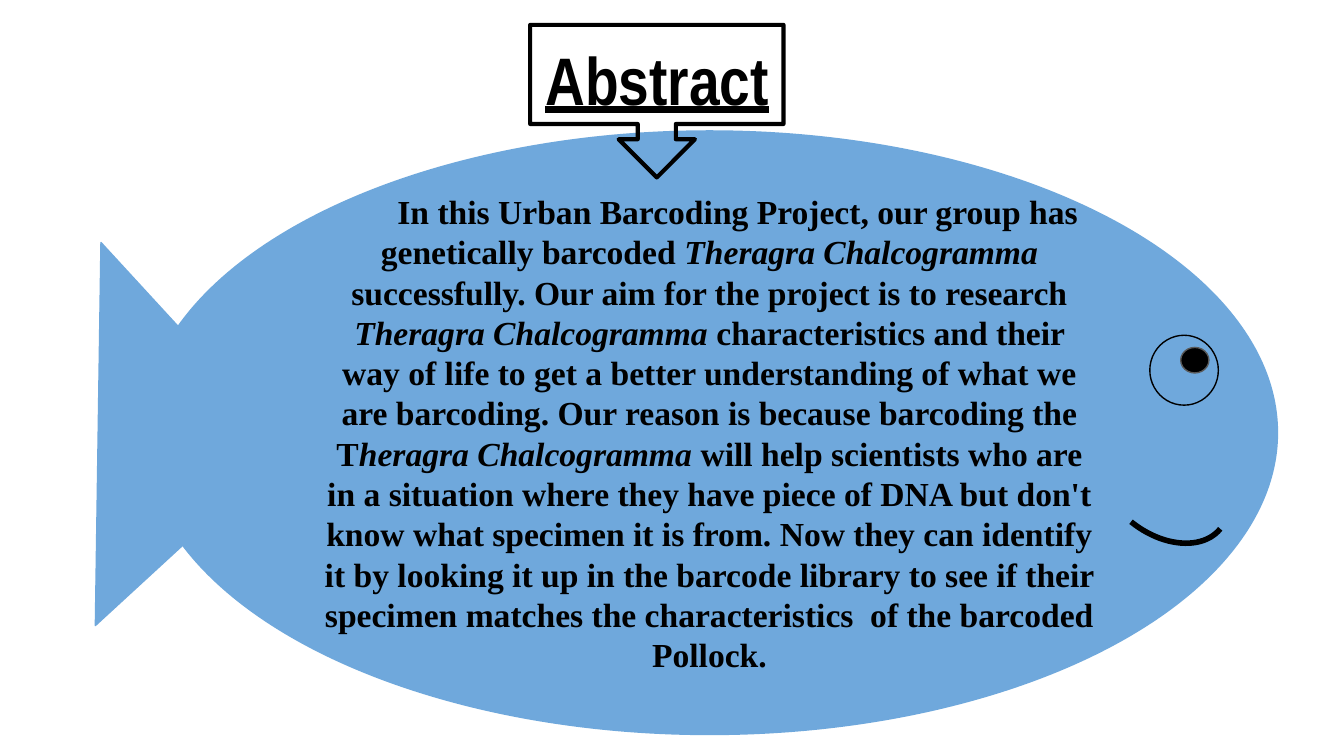
from dataclasses import dataclass
from typing import Optional

from pptx import Presentation
from pptx.dml.color import RGBColor
from pptx.enum.shapes import MSO_SHAPE
from pptx.enum.text import MSO_ANCHOR, MSO_AUTO_SIZE, PP_ALIGN
from pptx.util import Emu, Pt

PX = 4572  # EMU in one px, 200 px to the inch
PAGE_WIDTH, PAGE_HEIGHT = 2000, 1125
BLACK = RGBColor(0x00, 0x00, 0x00)
BLUE = RGBColor(0x6F, 0xA8, 0xDC)
GREY = RGBColor(0x59, 0x59, 0x59)
INSET = 20
FIRST_LINE_INDENT = 84


@dataclass
class Part:
    kind: MSO_SHAPE
    place: tuple[int, int, int, int]
    line: RGBColor
    weight: float
    fill: Optional[RGBColor] = None
    rotation: float = 0
    adjustments: tuple[float, ...] = ()


BODY = Part(MSO_SHAPE.FLOWCHART_CONNECTOR, (212, 196, 1688, 896), BLUE, 1.5, BLUE)
DETAILS = [
    Part(MSO_SHAPE.OVAL, (757 + 1000, 517, 42, 38), GREY, 0.75, BLACK),  # pupil
    Part(MSO_SHAPE.ARC, (1655, 608, 150, 220), BLACK, 3, rotation=128.8),  # smile
    Part(MSO_SHAPE.OVAL, (1711, 499, 102, 104), BLACK, 0.75),  # eye
    Part(MSO_SHAPE.DIAGONAL_STRIPE, (-50, 439, 392, 414), BLUE, 0.75, BLUE,
         137.4, (0.5,)),  # tail
    Part(MSO_SHAPE.DOWN_ARROW_CALLOUT, (789, 37, 377, 227), BLACK, 2.25,
         adjustments=(0.25, 0.25, 0.25, 0.65)),  # title frame
]

# Every second span is a species name in italics
ABSTRACT = [
    "In this Urban Barcoding Project, our group has genetically barcoded ",
    "Theragra Chalcogramma ",
    "successfully. Our aim for the project is to research ",
    "Theragra Chalcogramma",
    " characteristics and their way of life to get a better understanding of "
    "what we are barcoding. Our reason is because barcoding the T",
    "heragra Chalcogramma",
    " will help scientists who are in a situation where they have piece of DNA "
    "but don't know what specimen it is from. Now they can identify it by "
    "looking it up in the barcode library to see if their specimen matches the "
    "characteristics  of the barcoded Pollock.",
]


def draw_part(page, part: Part):
    shape = page.shapes.add_shape(part.kind, *(Emu(n * PX) for n in part.place))
    shape.shadow.inherit = False
    shape.rotation = part.rotation
    for index, value in enumerate(part.adjustments):
        shape.adjustments[index] = value
    if part.fill is None:
        shape.fill.background()
    else:
        shape.fill.solid()
        shape.fill.fore_color.rgb = part.fill
    shape.line.color.rgb = part.line
    shape.line.width = Pt(part.weight)
    return shape


def prepare_frame(frame, anchor: MSO_ANCHOR) -> None:
    frame.word_wrap = True
    frame.auto_size = MSO_AUTO_SIZE.NONE
    frame.vertical_anchor = anchor
    frame.margin_left = frame.margin_right = Emu(INSET * PX)
    frame.margin_top = frame.margin_bottom = Emu(INSET * PX)


def format_span(span, name: str, size: int) -> None:
    span.font.name = name
    span.font.size = Pt(size)
    span.font.bold = True
    span.font.color.rgb = BLACK


def write_title(page) -> None:
    title = page.shapes.title
    title.left, title.top, title.width, title.height = (
        Emu(n * PX) for n in (46, 37, 1864, 104))
    frame = title.text_frame
    frame.text = "Abstract"
    prepare_frame(frame, MSO_ANCHOR.TOP)
    para = frame.paragraphs[0]
    para.alignment = PP_ALIGN.CENTER
    format_span(para.runs[0], "Arial Narrow", 36)
    para.runs[0].font.underline = True


def write_abstract(frame) -> None:
    prepare_frame(frame, MSO_ANCHOR.MIDDLE)
    para = frame.paragraphs[0]
    para.alignment = PP_ALIGN.CENTER
    properties = para._p.get_or_add_pPr()
    properties.set("marL", "0")
    properties.set("indent", str(FIRST_LINE_INDENT * PX))
    for index, text in enumerate(ABSTRACT):
        span = para.add_run()
        span.text = text
        format_span(span, "Times New Roman", 18)
        span.font.italic = index % 2 == 1


def main() -> None:
    deck = Presentation()
    deck.slide_width, deck.slide_height = Emu(PAGE_WIDTH * PX), Emu(PAGE_HEIGHT * PX)
    page = deck.slides.add_slide(deck.slide_layouts[5])  # title only
    write_title(page)

    # Fish with the abstract in its body
    body = draw_part(page, BODY)
    write_abstract(body.text_frame)
    for part in DETAILS:
        draw_part(page, part)

    deck.save("out.pptx")


if __name__ == "__main__":
    main()
